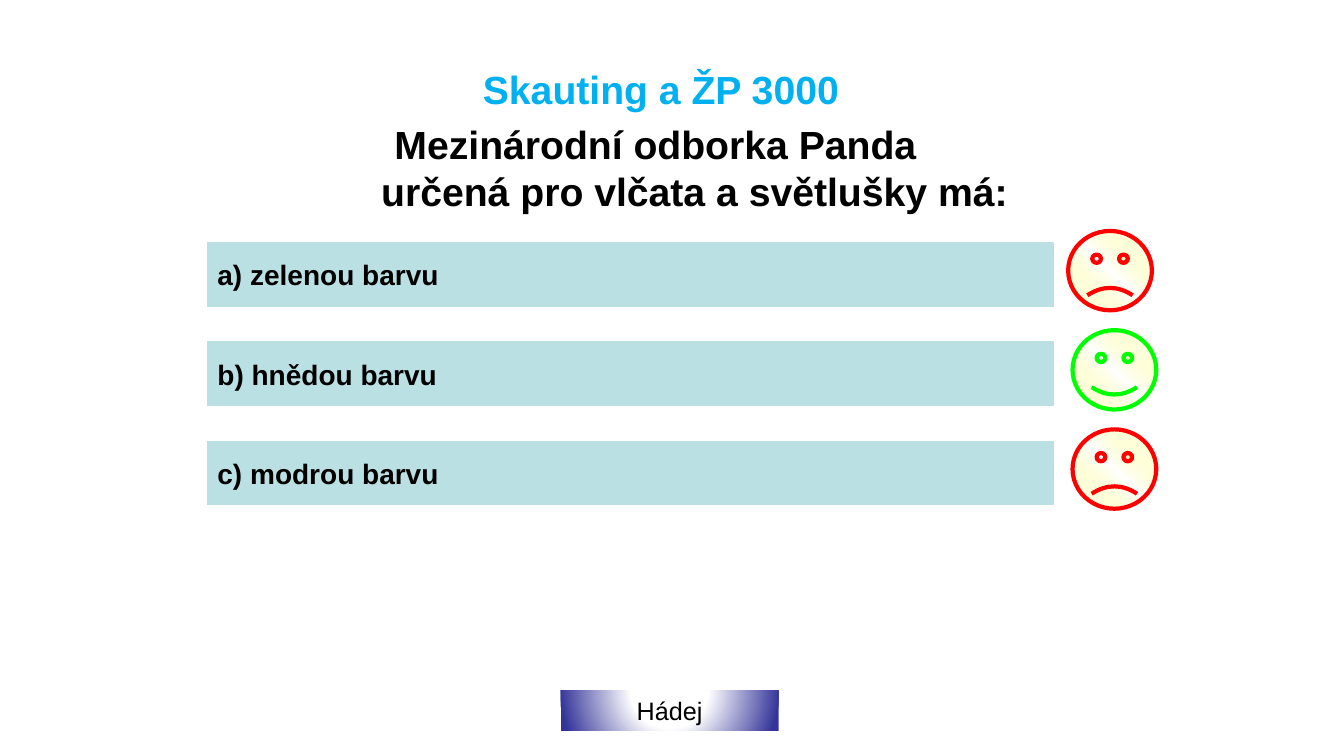
"""Build the quiz slide with three answers and their smiley marks."""
from dataclasses import dataclass

from pptx import Presentation
from pptx.dml.color import RGBColor
from pptx.enum.shapes import MSO_SHAPE
from pptx.enum.text import MSO_ANCHOR, MSO_AUTO_SIZE, PP_ALIGN
from pptx.oxml import parse_xml
from pptx.oxml.ns import nsdecls, qn
from pptx.shapes.autoshape import Shape
from pptx.slide import Slide
from pptx.util import Cm, Pt

COLORS = {
    "title": "00B0F0",
    "text": "000000",
    "bar": "BBE0E3",
    "wrong": "FF0000",
    "right": "00FF00",
    "white": "FFFFFF",
    "yellow": "FFFF66",
    "navy": "333399",
}
FONT = "Arial"
ROW_STEP = 2.5
FACE_SHADE = '<a:lin ang="18900000" scaled="1"/>'
BUTTON_SHADE = (
    '<a:path path="circle">'
    '<a:fillToRect l="50000" t="-80000" r="50000" b="180000"/></a:path>'
)


@dataclass
class Answer:
    """One answer bar with its mark."""
    text: str
    correct: bool
    face_left: float = 27.03


@dataclass
class Stop:
    """One gradient stop, in percent."""
    pos: int
    color: str
    alpha: int = 100


ANSWERS = [
    Answer("a) zelenou barvu", False, 26.92),
    Answer("b) hnědou barvu", True),
    Answer("c) modrou barvu", False),
]
FACE_STOPS = [Stop(0, "white"), Stop(50, "yellow", 0), Stop(100, "white")]
BUTTON_STOPS = [Stop(0, "white"), Stop(35, "white"), Stop(100, "navy")]


def rgb(name: str) -> RGBColor:
    """Return a named colour."""
    return RGBColor.from_string(COLORS[name])


def set_font(p, size: int, color: str, bold: bool) -> None:
    """Format the font of a paragraph."""
    p.font.name = FONT
    p.font.size = Pt(size)
    p.font.bold = bold
    p.font.color.rgb = rgb(color)


def set_gradient(sp: Shape, stops: list[Stop], shade: str) -> None:
    """Fill a shape with a gradient."""
    sp.fill.background()
    gs = "".join(
        f'<a:gs pos="{stop.pos * 1000}"><a:srgbClr val="{COLORS[stop.color]}">'
        f'<a:alpha val="{stop.alpha * 1000}"/></a:srgbClr></a:gs>'
        for stop in stops
    )
    fill = parse_xml(
        f'<a:gradFill {nsdecls("a")} rotWithShape="1">'
        f'<a:gsLst>{gs}</a:gsLst>{shade}</a:gradFill>'
    )
    spPr = sp.element.spPr
    spPr.replace(spPr.find(qn("a:noFill")), fill)


def add_shape(s: Slide, kind: MSO_SHAPE, left: float, top: float,
              width: float, height: float) -> Shape:
    """Add a preset shape without shadow, measured in centimetres."""
    sp = s.shapes.add_shape(kind, Cm(left), Cm(top), Cm(width), Cm(height))
    sp.shadow.inherit = False
    return sp


def add_label(sp: Shape, text: str, size: int, bold: bool, align: PP_ALIGN) -> None:
    """Write one line of text in a shape."""
    tf = sp.text_frame
    tf.word_wrap = True
    tf.vertical_anchor = MSO_ANCHOR.MIDDLE
    p = tf.paragraphs[0]
    p.text = text
    p.alignment = align
    set_font(p, size, "text", bold)


def add_question(s: Slide) -> None:
    """Fill the title with the topic and the question."""
    title = s.shapes.title
    title.left, title.top, title.width, title.height = Cm(4.23), Cm(1.52), Cm(25.4), Cm(1.9)
    tf = title.text_frame
    tf.word_wrap = True
    tf.auto_size = MSO_AUTO_SIZE.NONE
    tf.vertical_anchor = MSO_ANCHOR.TOP
    topic, question = tf.paragraphs[0], tf.add_paragraph()
    topic.text = "Skauting a ŽP 3000"
    question.text = "Mezinárodní odborka Panda \vurčená pro vlčata a světlušky má:"
    question.space_before = Pt(5.6)
    for p, color in ((topic, "title"), (question, "text")):
        p.alignment = PP_ALIGN.CENTER
        p.line_spacing = 1.0
        set_font(p, 28, color, True)
    topic._p.get_or_add_pPr().set("marR", str(Cm(0.55)))
    pPr = question._p.get_or_add_pPr()
    pPr.set("marL", str(Cm(1.69)))
    pPr.set("indent", str(Cm(-1.69)))


def add_answer(s: Slide, row: int, answer: Answer) -> None:
    """Add an answer bar and its smiley."""
    offset = row * ROW_STEP
    bar = add_shape(s, MSO_SHAPE.ACTION_BUTTON_CUSTOM, 5.23, 6.12 + offset, 21.31, 1.6)
    bar.fill.solid()
    bar.fill.fore_color.rgb = rgb("bar")
    bar.line.color.rgb = rgb("bar")
    bar.line.width = Pt(1)
    add_label(bar, answer.text, 20, True, PP_ALIGN.LEFT)

    face = add_shape(s, MSO_SHAPE.SMILEY_FACE, answer.face_left, 5.82 + offset, 2.11, 2)
    face.adjustments[0] = 0.047 if answer.correct else -0.047
    set_gradient(face, FACE_STOPS, FACE_SHADE)
    face.line.color.rgb = rgb("right" if answer.correct else "wrong")
    face.line.width = Pt(3)


def add_back_button(s: Slide) -> None:
    """Add the button at the foot of the slide."""
    button = add_shape(s, MSO_SHAPE.ACTION_BUTTON_CUSTOM, 14.13, 17.39, 5.49, 1.02)
    set_gradient(button, BUTTON_STOPS, BUTTON_SHADE)
    button.line.fill.background()
    add_label(button, "Hádej", 18, False, PP_ALIGN.CENTER)


def main() -> None:
    """Build and save the slide."""
    prs = Presentation()
    prs.slide_width, prs.slide_height = Cm(33.87), Cm(19.05)
    s = prs.slides.add_slide(prs.slide_layouts[5])
    add_question(s)
    for row, answer in enumerate(ANSWERS):
        add_answer(s, row, answer)
    add_back_button(s)
    prs.save("out.pptx")


if __name__ == "__main__":
    main()
